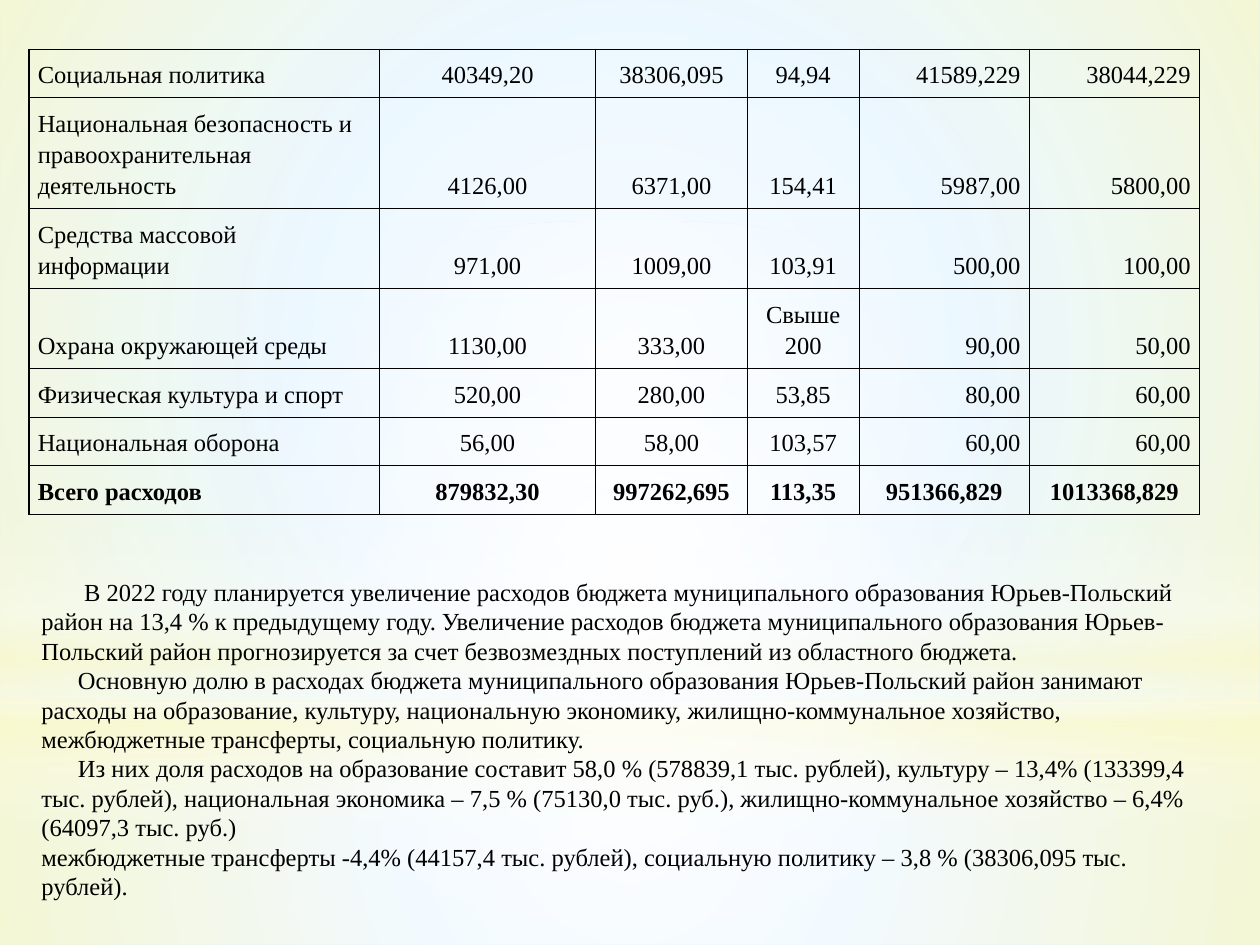
from lxml import etree
from pptx import Presentation
from pptx.dml.color import RGBColor
from pptx.enum.shapes import MSO_SHAPE
from pptx.enum.text import MSO_ANCHOR, MSO_AUTO_SIZE, PP_ALIGN
from pptx.oxml import parse_xml
from pptx.oxml.ns import nsdecls, qn
from pptx.util import Inches, Pt

BLACK = RGBColor(0x00, 0x00, 0x00)
SKY = RGBColor(0xCC, 0xEC, 0xFF)
WHITE = RGBColor(0xFF, 0xFF, 0xFF)
CREAM = RGBColor(0xFE, 0xFA, 0xC9)
FONT = "Times New Roman"
CIRCLE = ('<a:path path="circle">'
          '<a:fillToRect l="50000" t="50000" r="50000" b="50000"/></a:path>')
DOWN = '<a:lin ang="5400000" scaled="0"/>'


def add_glow(kind, top, height, stops, direction):
    """Add a full-width shape with a translucent gradient."""
    shape = slide.shapes.add_shape(
        kind, 0, Inches(top), presentation.slide_width, Inches(height))
    shape.shadow.inherit = False
    shape.line.fill.background()
    shape.fill.background()
    marks = "".join(
        f'<a:gs pos="{position * 1000}"><a:srgbClr val="{color}">'
        f'<a:alpha val="{opacity * 1000}"/></a:srgbClr></a:gs>'
        for position, color, opacity in stops)
    properties = shape.element.spPr
    properties.replace(properties.find(qn("a:noFill")), parse_xml(
        f'<a:gradFill {nsdecls("a")} rotWithShape="1">'
        f'<a:gsLst>{marks}</a:gsLst>{direction}</a:gradFill>'))


def add_run(paragraph, text, bold=False):
    run = paragraph.add_run()
    run.text = text
    run.font.name = FONT
    run.font.size = Pt(14)
    run.font.bold = bold
    run.font.color.rgb = BLACK


presentation = Presentation()
presentation.slide_width = Inches(10)
presentation.slide_height = Inches(7.5)
slide = presentation.slides.add_slide(presentation.slide_layouts[6])

# Background
slide.background.fill.solid()
slide.background.fill.fore_color.rgb = SKY
add_glow(MSO_SHAPE.RECTANGLE, 5.58, 1.92,
         [(0, WHITE, 91), (37, WHITE, 76), (100, CREAM, 79)], CIRCLE)
add_glow(MSO_SHAPE.RECTANGLE, 0, 5.58,
         [(0, WHITE, 89), (48, WHITE, 62), (100, CREAM, 79)], CIRCLE)
add_glow(MSO_SHAPE.RECTANGLE, 4.12, 2.5,
         [(0, WHITE, 0), (29, WHITE, 30), (45, CREAM, 40),
          (55, WHITE, 26), (65, CREAM, 60), (100, WHITE, 0)], DOWN)
add_glow(MSO_SHAPE.OVAL, 1.75, 5.58,
         [(0, WHITE, 100), (56, WHITE, 0)], CIRCLE)

# Expense table
EXPENSES = [
    ("Социальная политика", "40349,20", "38306,095", "94,94",
     "41589,229", "38044,229"),
    ("Национальная безопасность и правоохранительная деятельность",
     "4126,00", "6371,00", "154,41", "5987,00", "5800,00"),
    ("Средства массовой информации", "971,00", "1009,00", "103,91",
     "500,00", "100,00"),
    ("Охрана окружающей среды", "1130,00", "333,00", "Свыше 200",
     "90,00", "50,00"),
    ("Физическая культура и спорт", "520,00", "280,00", "53,85",
     "80,00", "60,00"),
    ("Национальная оборона", "56,00", "58,00", "103,57", "60,00", "60,00"),
    ("Всего расходов", "879832,30", "997262,695", "113,35",
     "951366,829", "1013368,829"),
]
COLUMN_WIDTHS = [2.78, 1.72, 1.2, 0.89, 1.35, 1.35]
ROW_HEIGHTS = [0.25, 0.51, 0.33, 0.37, 0.34, 0.29, 0.24]
ALIGNMENTS = [PP_ALIGN.LEFT] + [PP_ALIGN.CENTER] * 3 + [PP_ALIGN.RIGHT] * 2

table = slide.shapes.add_table(
    len(EXPENSES), len(COLUMN_WIDTHS), Inches(0.23), Inches(0.39),
    Inches(sum(COLUMN_WIDTHS)), Inches(sum(ROW_HEIGHTS))).table
table.first_row = False
table.horz_banding = False
for column, width in zip(table.columns, COLUMN_WIDTHS):
    column.width = Inches(width)
for row, height in zip(table.rows, ROW_HEIGHTS):
    row.height = Inches(height)

for row_index, values in enumerate(EXPENSES):
    is_total = row_index == len(EXPENSES) - 1
    for column_index, value in enumerate(values):
        cell = table.cell(row_index, column_index)
        cell.vertical_anchor = MSO_ANCHOR.BOTTOM
        cell.margin_left = cell.margin_right = Inches(0.07)
        cell.margin_top = cell.margin_bottom = Inches(0.07)
        cell.fill.background()
        paragraph = cell.text_frame.paragraphs[0]
        paragraph.line_spacing = 1.15
        paragraph.alignment = ALIGNMENTS[column_index]
        if is_total and column_index:
            paragraph.alignment = PP_ALIGN.CENTER
        add_run(paragraph, value, is_total)
        # Borders come before the fill in the cell properties
        cell_properties = cell._tc.get_or_add_tcPr()
        for place, side in enumerate(("lnL", "lnR", "lnT", "lnB")):
            border = etree.Element(qn(f"a:{side}"), w=str(Pt(0.75)))
            solid = etree.SubElement(border, qn("a:solidFill"))
            etree.SubElement(solid, qn("a:srgbClr"), val=str(BLACK))
            cell_properties.insert(place, border)

# Commentary: first-line indent in inches and text
COMMENTARY = [
    (0.34, "В 2022 году планируется увеличение расходов бюджета муниципального "
           "образования Юрьев-Польский район на 13,4 % к предыдущему году. "
           "Увеличение расходов бюджета муниципального образования "
           "Юрьев-Польский район прогнозируется за счет безвозмездных "
           "поступлений из областного бюджета."),
    (0.29, "Основную долю в расходах бюджета муниципального образования "
           "Юрьев-Польский район занимают расходы на образование, культуру, "
           "национальную экономику, жилищно-коммунальное хозяйство, "
           "межбюджетные трансферты, социальную политику."),
    (0.29, "Из них доля расходов на образование составит 58,0 % (578839,1 тыс. "
           "рублей), культуру – 13,4% (133399,4 тыс. рублей), национальная "
           "экономика – 7,5 % (75130,0 тыс. руб.), жилищно-коммунальное "
           "хозяйство – 6,4% (64097,3 тыс. руб.)"),
    (0, "межбюджетные трансферты -4,4% (44157,4 тыс. рублей), социальную "
        "политику – 3,8 % (38306,095 тыс. рублей)."),
]
text_frame = slide.shapes.add_textbox(
    Inches(0.23), Inches(4.53), Inches(9.38), Inches(2.93)).text_frame
text_frame.word_wrap = True
text_frame.auto_size = MSO_AUTO_SIZE.SHAPE_TO_FIT_TEXT
for index, (indent, text) in enumerate(COMMENTARY):
    paragraph = text_frame.add_paragraph() if index else text_frame.paragraphs[0]
    paragraph_properties = paragraph._p.get_or_add_pPr()
    paragraph_properties.set("marL", "0")
    paragraph_properties.set("indent", str(Inches(indent)))
    add_run(paragraph, text)

presentation.save("out.pptx")
